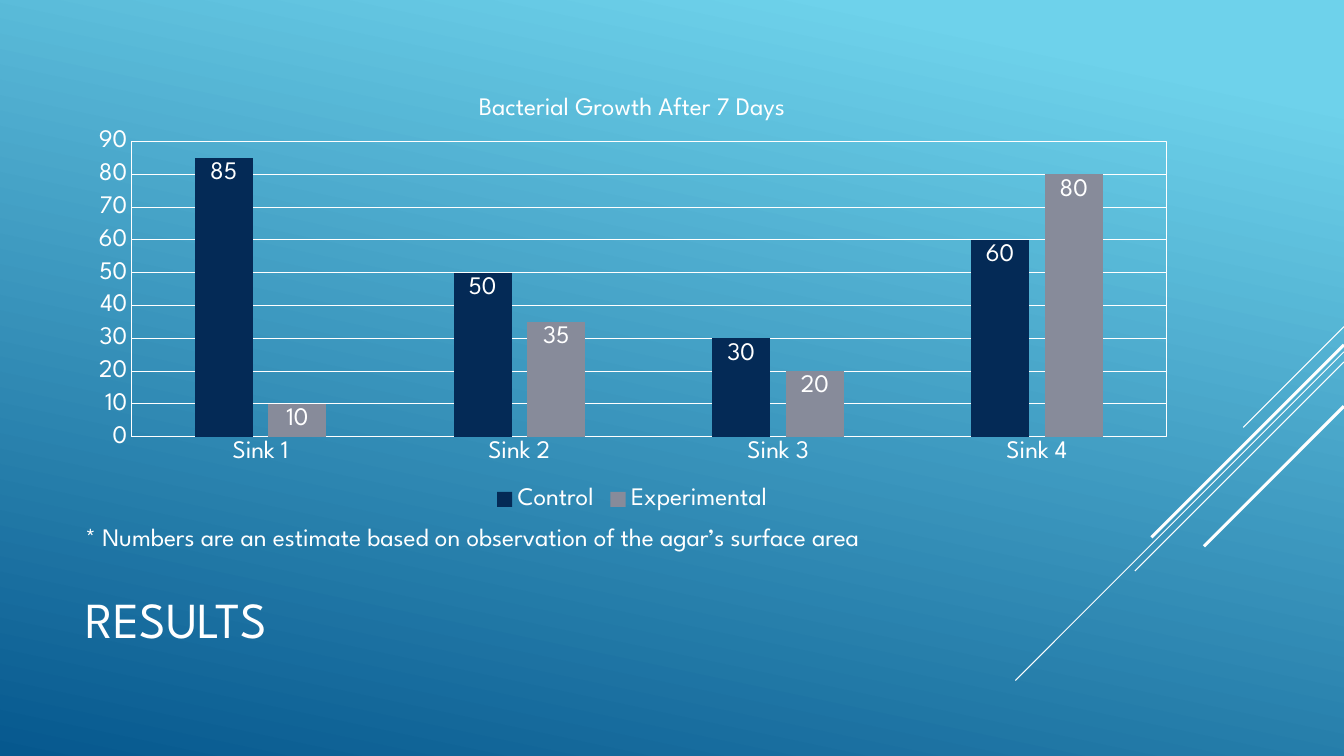
import pptx
import pptx.util
import pptx.dml.color
import pptx.chart.data
import pptx.enum.chart
import pptx.enum.text
import pptx.oxml
import pptx.oxml.ns

Pt = pptx.util.Pt
kinds = pptx.enum.chart
face = "League Spartan"
hues = {"white": "FFFFFF", "sky": "6ED2EB", "deep": "06588E", "navy": "042A56", "gray": "878B9A"}


def rgb(name):
    return pptx.dml.color.RGBColor.from_string(hues[name])


def write(text, box=None, font=None, size=18, anchor="TOP"):
    if box:
        frame = slide.shapes.add_textbox(*map(Pt, box)).text_frame
        frame.word_wrap = True
        frame.vertical_anchor = getattr(pptx.enum.text.MSO_ANCHOR, anchor)
        run = frame.paragraphs[0].add_run()
        run.text = text
        font = run.font
    font.name = face
    font.size = Pt(size)
    font.bold = False
    font.color.rgb = rgb("white")


deck = pptx.Presentation()
deck.slide_width, deck.slide_height = Pt(960), Pt(540)
slide = deck.slides.add_slide(deck.slide_layouts[6])

back = slide.background.fill
back.gradient()
back.gradient_angle = 258
for stop, name, place in zip(back.gradient_stops, ("sky", "deep"), (0.1, 1)):
    stop.color.rgb = rgb(name)
    stop.position = place

for top, span, width in [(233.3, 72, 0.75), (251.3, 234.7, 0.75), (258.5, 149.4, 0.75),
                         (246.3, 137.5, 2.25), (290.2, 100, 2.25)]:
    line = slide.shapes.add_connector(1, Pt(960), Pt(top), Pt(960 - span), Pt(top + span))
    line.line.color.rgb = rgb("white")
    line.line.width = Pt(width)
    line._element.spPr.append(pptx.oxml.parse_xml(
        f"<a:effectLst {pptx.oxml.ns.nsdecls('a')}/>"))

write("RESULTS", box=(54, 382.3, 672, 118.8), size=36, anchor="MIDDLE")

data = pptx.chart.data.CategoryChartData()
data.categories = [f"Sink {n}" for n in range(1, 5)]
data.add_series("Control", (85, 50, 30, 60))
data.add_series("Experimental", (10, 35, 20, 80))
chart = slide.shapes.add_chart(kinds.XL_CHART_TYPE.COLUMN_CLUSTERED,
                               Pt(54), Pt(54), Pt(795), Pt(314.6), data).chart
write("", font=chart.font, size=10)
chart.has_title = True
title = chart.chart_title.text_frame
title.text = "Bacterial Growth After 7 Days"
write("", font=title.paragraphs[0].runs[0].font)
chart.chart_title.include_in_layout = False
chart.has_legend = True
chart.legend.position = kinds.XL_LEGEND_POSITION.BOTTOM
chart.legend.include_in_layout = False
write("", font=chart.legend.font)

for axis in (chart.category_axis, chart.value_axis):
    axis.major_tick_mark = axis.minor_tick_mark = kinds.XL_TICK_MARK.NONE
    axis.format.line.color.rgb = rgb("white")
    axis.format.line.width = Pt(0.75)
    write("", font=axis.tick_labels.font)
scale = chart.value_axis
scale.minimum_scale, scale.maximum_scale, scale.major_unit = 0, 90, 10
scale.major_gridlines.format.line.color.rgb = rgb("white")
scale.major_gridlines.format.line.width = Pt(0.75)

plot = chart.plots[0]
plot.gap_width, plot.overlap = 219, -27
plot.vary_by_categories = False
for bars, name in zip(plot.series, ("navy", "gray")):
    bars.format.fill.solid()
    bars.format.fill.fore_color.rgb = rgb(name)
    tags = bars.data_labels
    tags.show_value = True
    tags.position = kinds.XL_LABEL_POSITION.INSIDE_END
    write("", font=tags.font)

area = chart._chartSpace.chart.plotArea
for old in area.findall(pptx.oxml.ns.qn("c:layout")):
    area.remove(old)
spots = "".join(f'<c:{key} val="{val}"/>' for key, val in
                [("layoutTarget", "inner"), ("xMode", "edge"), ("yMode", "edge"),
                 ("x", 0.05), ("y", 0.15), ("w", 0.93), ("h", 0.67)])
area.insert(0, pptx.oxml.parse_xml(
    f"<c:layout {pptx.oxml.ns.nsdecls('c')}><c:manualLayout>{spots}</c:manualLayout></c:layout>"))
area.append(pptx.oxml.parse_xml(
    f"<c:spPr {pptx.oxml.ns.nsdecls('c', 'a')}><a:noFill/><a:ln w=\"9525\"><a:solidFill>"
    f"<a:srgbClr val=\"{hues['white']}\"/></a:solidFill></a:ln></c:spPr>"))

write("* Numbers are an estimate based on observation of the agar’s surface area",
      box=(54, 368.6, 798, 29))

deck.save("out.pptx")
